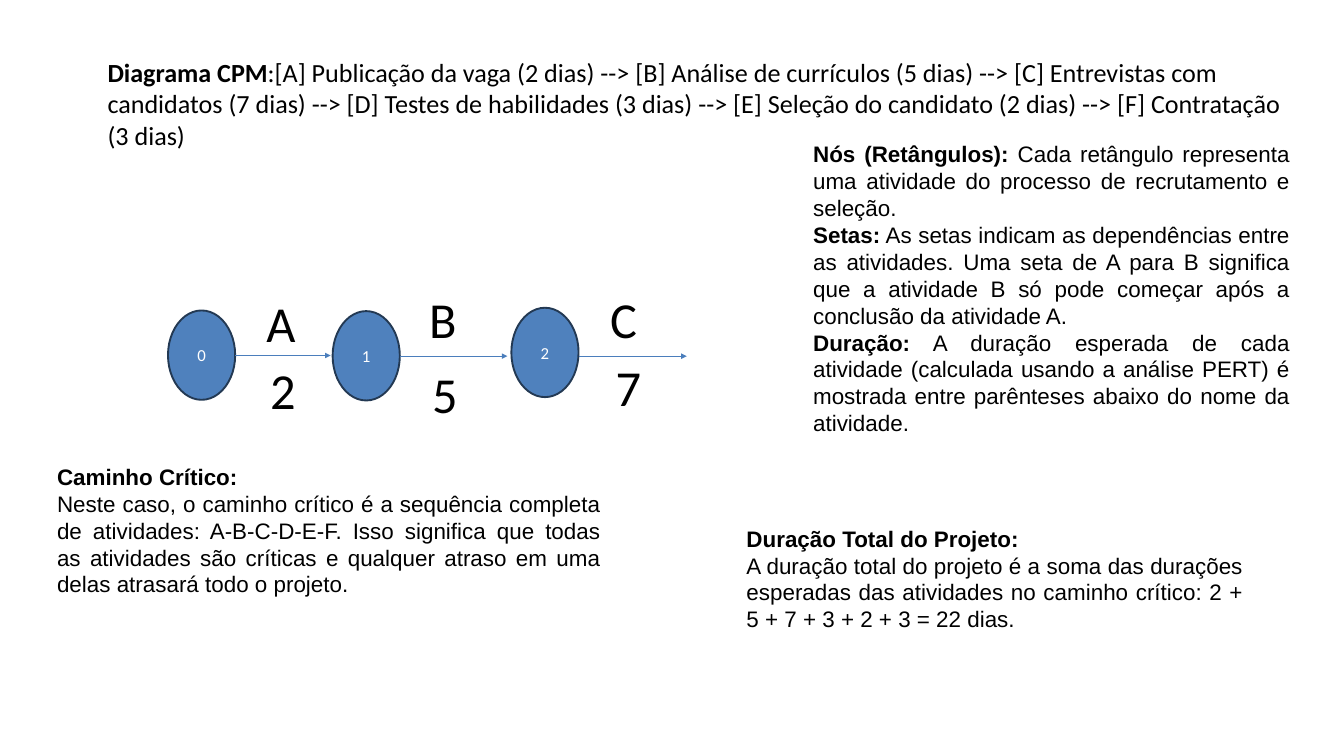
from lxml import etree
from pptx import Presentation
from pptx.dml.color import RGBColor
from pptx.enum.shapes import MSO_CONNECTOR, MSO_SHAPE
from pptx.enum.text import MSO_ANCHOR as Anchor, MSO_AUTO_SIZE as AutoSize, PP_ALIGN as Align
from pptx.oxml.ns import qn
from pptx.util import Inches, Pt

COLORS = {"text": "000000", "node": "4F81BD", "outline": "233953",
          "arrow": "4B7EBC", "node_text": "FFFFFF"}

HEADING = [("Diagrama CPM", True),
           (":[A] Publicação da vaga (2 dias) --> [B] Análise de currículos (5 dias) --> "
            "[C] Entrevistas com candidatos (7 dias) --> [D] Testes de habilidades (3 dias) --> "
            "[E] Seleção do candidato (2 dias) --> [F] Contratação (3 dias)", False)]

LEGEND = [
    [("Nós (Retângulos):", True),
     (" Cada retângulo representa uma atividade do processo de recrutamento e seleção. ", False)],
    [("Setas:", True),
     (" As setas indicam as dependências entre as atividades. Uma seta de A para B significa "
      "que a atividade B só pode começar após a conclusão da atividade A. ", False)],
    [("Duração:", True),
     (" A duração esperada de cada atividade (calculada usando a análise PERT) é mostrada "
      "entre parênteses abaixo do nome da atividade. ", False)],
]

CRITICAL_PATH = [
    [("Caminho Crítico:", True)],
    [("Neste caso, o caminho crítico é a sequência completa de atividades: A-B-C-D-E-F. "
      "Isso significa que todas as atividades são críticas e qualquer atraso em uma delas "
      "atrasará todo o projeto.", False)],
]

TOTAL_DURATION = [
    [("Duração Total do Projeto:", True)],
    [("A duração total do projeto é a soma das durações esperadas das atividades no caminho "
      "crítico: 2 + 5 + 7 + 3 + 2 + 3 = 22 dias.", False)],
]

# Node name and corner, arrow end and height, then (text, left, top) of name and duration
STEPS = [
    ("0", 2.5, 4.62, 4.92, 5.29, ("A", 3.86, 4.29), ("2", 3.89, 5.3)),
    ("1", 4.95, 4.63, 7.55, 5.3, ("B", 6.27, 4.24), ("5", 6.3, 5.35)),
    ("2", 7.61, 4.58, 10.22, 5.3, ("C", 8.96, 4.24), ("7", 9.03, 5.25)),
]
NODE_WIDTH, NODE_HEIGHT = 1, 1.33


def color(name):
    return RGBColor.from_string(COLORS[name])


def place(shape, box):
    shape.left, shape.top, shape.width, shape.height = map(Inches, box)


def write(shape, paragraphs, size, font, align, anchor=Anchor.TOP, ink="text"):
    """Fill a shape with paragraphs, each a list of (text, bold) runs."""
    frame = shape.text_frame
    frame.word_wrap = True
    frame.vertical_anchor = anchor
    for index, runs in enumerate(paragraphs):
        para = frame.add_paragraph() if index else frame.paragraphs[0]
        para.alignment = align
        para.space_before = Pt(0)
        para.font.size, para.font.name = Pt(size), font
        para.font.color.rgb = color(ink)
        for text, bold in runs:
            span = para.add_run()
            span.text = text
            span.font.bold = bold


def add_heading(page, box):
    title = page.shapes.title
    place(title, box)
    write(title, [HEADING], 28, "Calibri", Align.LEFT)
    title.text_frame.auto_size = AutoSize.SHAPE_TO_FIT_TEXT


def add_legend(page, box):
    body = page.placeholders[1]
    place(body, box)
    write(body, LEGEND, 24, "Arial", Align.JUSTIFY, Anchor.MIDDLE)
    body.text_frame.auto_size = AutoSize.SHAPE_TO_FIT_TEXT
    for para in body.text_frame.paragraphs:
        para.level = 2
        props = para._p.get_or_add_pPr()
        props.set("marL", str(Inches(1)))
        props.set("indent", "0")
        etree.SubElement(props, qn("a:buNone"))
        # Bullet settings come before the default run properties
        props.append(props.find(qn("a:defRPr")))


def add_text(page, box, paragraphs, size, font, align):
    text_box = page.shapes.add_textbox(*map(Inches, box))
    write(text_box, paragraphs, size, font, align)
    text_box.text_frame.auto_size = AutoSize.SHAPE_TO_FIT_TEXT


def add_node(page, box, name):
    node = page.shapes.add_shape(MSO_SHAPE.FLOWCHART_CONNECTOR, *map(Inches, box))
    node.shadow.inherit = False
    node.fill.solid()
    node.fill.fore_color.rgb = color("node")
    node.line.color.rgb = color("outline")
    node.line.width = Pt(2)
    write(node, [[(name, False)]], 18, "Calibri", Align.CENTER, Anchor.MIDDLE, "node_text")


def add_arrow(page, start, end, height):
    arrow = page.shapes.add_connector(MSO_CONNECTOR.STRAIGHT, Inches(start), Inches(height),
                                      Inches(end), Inches(height))
    arrow.line.color.rgb = color("arrow")
    arrow.line.width = Pt(0.75)
    etree.SubElement(arrow.line._get_or_add_ln(), qn("a:tailEnd"), type="triangle")
    etree.SubElement(arrow._element.spPr, qn("a:effectLst"))


def add_network(page):
    for name, left, top, arrow_end, arrow_top, *labels in STEPS:
        add_node(page, (left, top, NODE_WIDTH, NODE_HEIGHT), name)
        add_arrow(page, left + NODE_WIDTH, arrow_end, arrow_top)
        for text, label_left, label_top in labels:
            add_text(page, (label_left, label_top, 0.64, 1.01), [[(text, False)]],
                     54, "Calibri", Align.CENTER)


def main():
    deck = Presentation()
    deck.slide_width, deck.slide_height = Inches(20), Inches(11.25)
    page = deck.slides.add_slide(deck.slide_layouts[1])
    add_heading(page, (1.5, 0.79, 17.83, 1.51))
    add_network(page)
    add_legend(page, (11, 2.02, 8.29, 4.54))
    add_text(page, (0.75, 6.84, 8.28, 2.12), CRITICAL_PATH, 24, "Arial", Align.JUSTIFY)
    add_text(page, (11.01, 7.76, 7.58, 1.72), TOTAL_DURATION, 24, "Arial", Align.JUSTIFY)
    deck.save("out.pptx")


if __name__ == "__main__":
    main()
